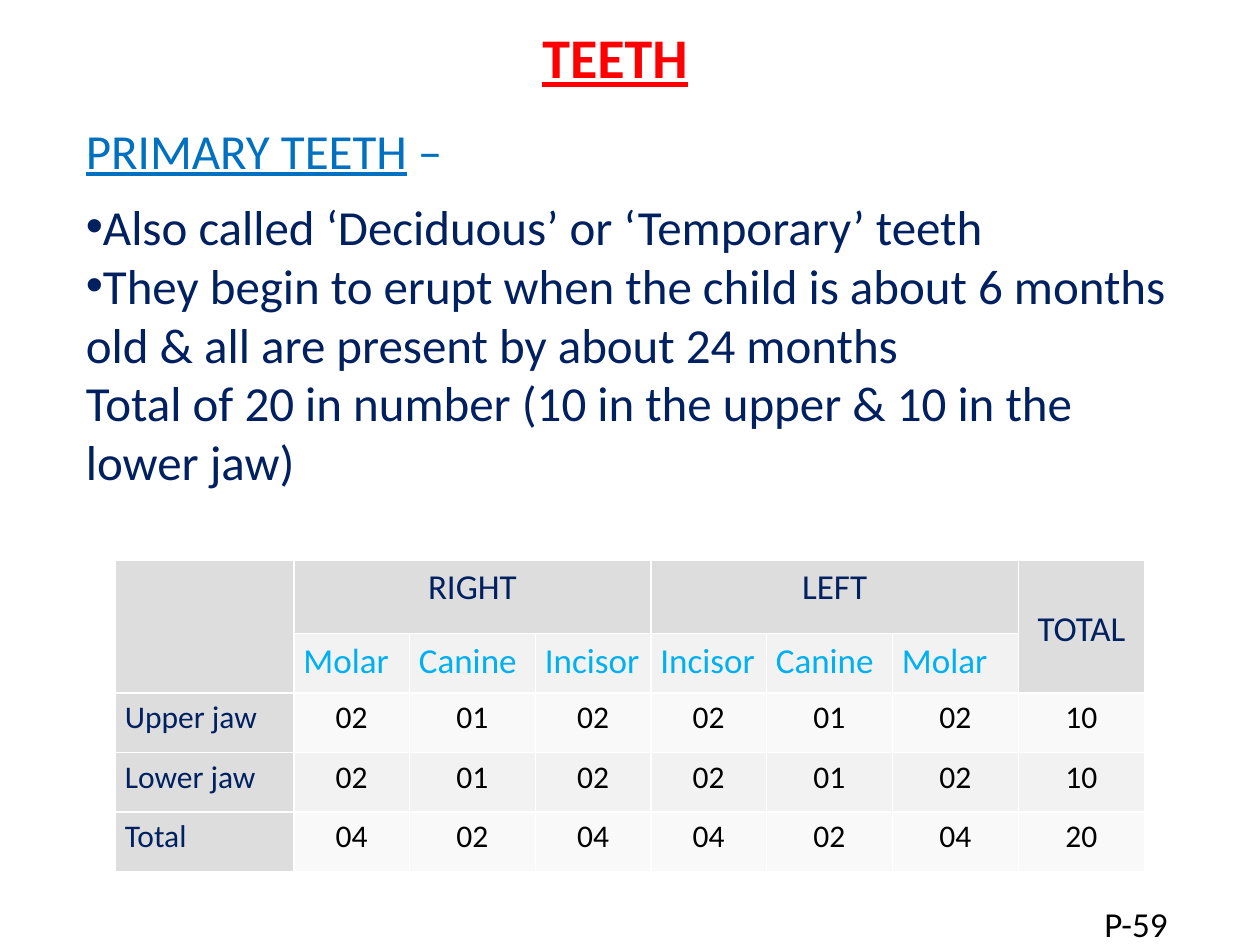
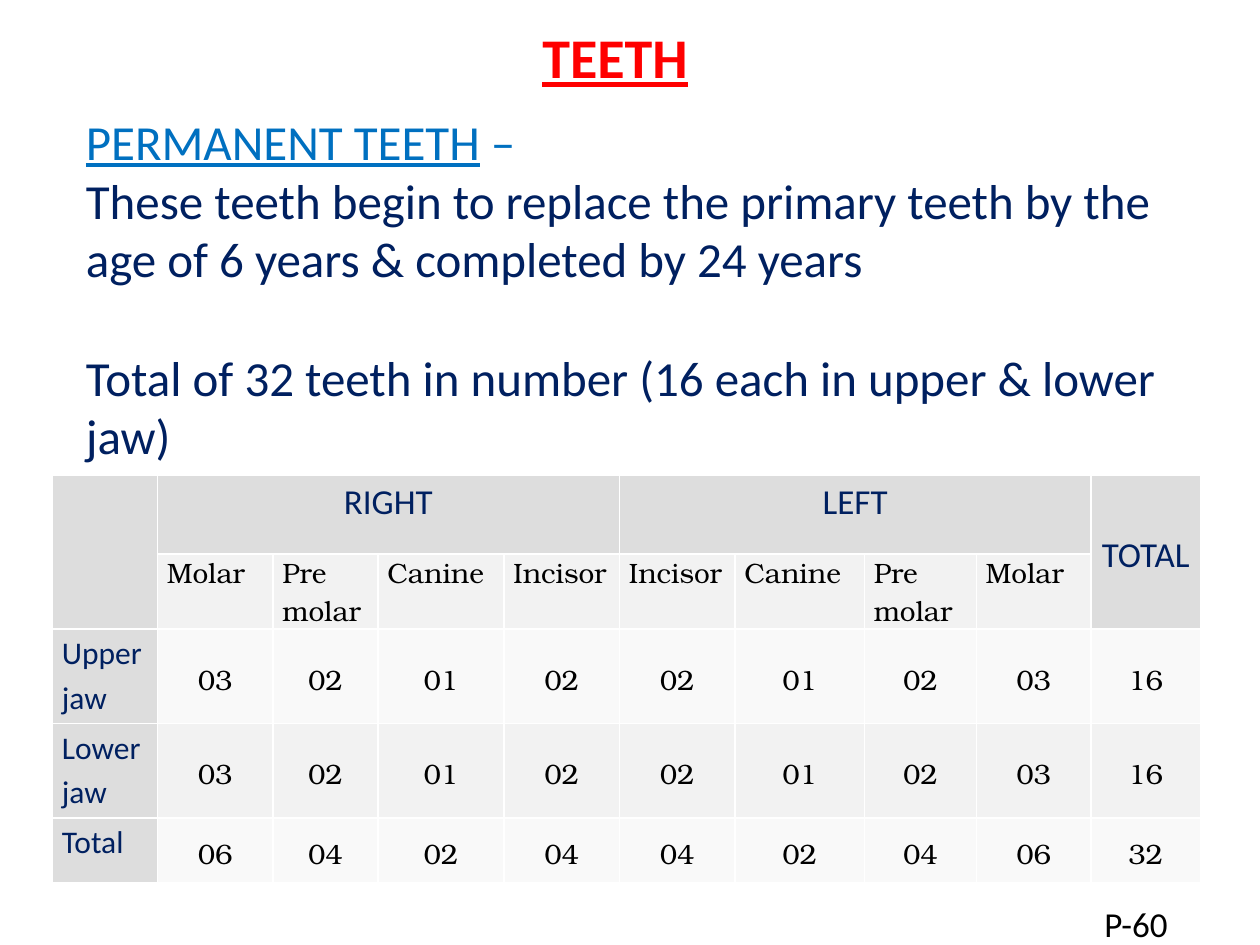
from dataclasses import dataclass

from lxml import etree
from pptx import Presentation
from pptx.dml.color import RGBColor
from pptx.enum.text import MSO_ANCHOR, MSO_AUTO_SIZE, PP_ALIGN
from pptx.oxml.ns import qn
from pptx.util import Pt

RED = RGBColor(0xFF, 0x00, 0x00)
BLUE = RGBColor(0x00, 0x70, 0xC0)
NAVY = RGBColor(0x00, 0x20, 0x60)
SKY = RGBColor(0x00, 0xB0, 0xF0)
BLACK = RGBColor(0x00, 0x00, 0x00)
GREY = RGBColor(0xDD, 0xDD, 0xDD)
PALE = RGBColor(0xF2, 0xF2, 0xF2)
LIGHT = RGBColor(0xF9, 0xF9, 0xF9)
CENTER, JUSTIFY = PP_ALIGN.CENTER, PP_ALIGN.JUSTIFY
TOP, MIDDLE = MSO_ANCHOR.TOP, MSO_ANCHOR.MIDDLE
FIT = MSO_AUTO_SIZE.SHAPE_TO_FIT_TEXT
SANS, SERIF = "Calibri", "TeX Gyre Bonum"


@dataclass(frozen=True)
class Style:
    """Look of a piece of text."""
    size: float
    color: RGBColor
    face: str = SANS
    bold: bool = False
    under: bool = False


@dataclass(frozen=True)
class Point:
    """One body paragraph."""
    text: str
    bullet: bool = False
    before: float = 0


@dataclass(frozen=True)
class Grid:
    """Tooth counts of one jaw side, with the look of their table."""
    left: float
    top: float
    cols: tuple
    rows: tuple
    teeth: dict
    name: Style
    count: Style
    anchor: MSO_ANCHOR
    loose: bool


@dataclass(frozen=True)
class Page:
    """Content of one slide."""
    head: str
    points: tuple
    height: float
    spaced: bool
    grid: Grid
    number: str


TITLE = Style(32, RED, bold=True, under=True)
HEAD = Style(28, BLUE, under=True)
DASH = Style(28, BLUE)
BODY = Style(28, NAVY)
SIDE = Style(20, NAVY)
JAW = Style(18, NAVY)
FOOT = Style(20, BLACK)
SMALL = Style(16, BLACK, SERIF)

PAGES = (
    Page(
        "PRIMARY TEETH",
        (
            Point("Also called ‘Deciduous’ or ‘Temporary’ teeth", True),
            Point("They begin to erupt when the child is about 6 months old "
                  "& all are present by about 24 months", True),
            Point("Total of 20 in number (10 in the upper & 10 in the lower jaw)"),
        ),
        226, True,
        Grid(66, 320, (102, 66, 72, 66, 66, 72, 72, 72), (42, 34, 34, 34, 34),
             {"Molar": 2, "Canine": 1, "Incisor": 2},
             Style(20, SKY), Style(18, BLACK), TOP, True),
        "P-59",
    ),
    Page(
        "PERMANENT TEETH",
        (
            Point("These teeth begin to replace the primary teeth by the age "
                  "of 6 years & completed by 24 years"),
            Point("Total of 32 teeth in number (16 each in upper & lower jaw)",
                  before=34),
        ),
        211, False,
        Grid(30, 271.5, (60, 66, 60, 72, 66, 66, 74, 64, 65.5, 62.6),
             (45, 43, 54, 54, 37),
             {"Molar": 3, "Pre\nmolar": 2, "Canine": 1, "Incisor": 2},
             SMALL, SMALL, MIDDLE, False),
        "P-60",
    ),
)


def paint(run, style: Style) -> None:
    """Give a run its style."""
    font = run.font
    font.name, font.size, font.color.rgb = style.face, Pt(style.size), style.color
    font.bold, font.underline = style.bold, style.under


def relax(para) -> None:
    """Open up the line spacing and the gap after a paragraph."""
    para.line_spacing, para.space_after = 1.15, Pt(10)


def add_box(slide, left: float, top: float, width: float, height: float,
            text: str, style: Style):
    """Add a text box and return its text frame."""
    frame = slide.shapes.add_textbox(
        Pt(left), Pt(top), Pt(width), Pt(height)).text_frame
    frame.text = text
    paint(frame.paragraphs[0].runs[0], style)
    return frame


def add_dot(para) -> None:
    """Put a bullet right before the text."""
    props = para._p.get_or_add_pPr()
    props.set("marL", "0")
    props.set("indent", "0")
    etree.SubElement(props, qn("a:buFont"), typeface="Arial")
    etree.SubElement(props, qn("a:buChar"), char="•")


def add_body(slide, page: Page) -> None:
    """Add the heading and the points below it."""
    frame = add_box(slide, 42, 60, 644, page.height, page.head, HEAD)
    frame.word_wrap, frame.auto_size = True, FIT
    head = frame.paragraphs[0]
    dash = head.add_run()
    dash.text = " –"
    paint(dash, DASH)
    if page.spaced:
        relax(head)
    for point in page.points:
        para = frame.add_paragraph()
        para.text = point.text
        if point.bullet:
            add_dot(para)
        if point.before:
            para.space_before = Pt(point.before)
        paint(para.runs[0], BODY)


def edge(cell) -> None:
    """Draw thin white borders around a cell."""
    props = cell._tc.get_or_add_tcPr()
    for side in ("lnL", "lnR", "lnT", "lnB"):
        line = etree.SubElement(props, qn(f"a:{side}"), w=str(Pt(1)))
        fill = etree.SubElement(line, qn("a:solidFill"))
        etree.SubElement(fill, qn("a:srgbClr"), val="FFFFFF")


def put(cell, text: str, style: Style, align: PP_ALIGN,
        anchor: MSO_ANCHOR = TOP, loose: bool = True) -> None:
    """Write styled text into a cell."""
    cell.text_frame.text = text
    cell.vertical_anchor = anchor
    for para in cell.text_frame.paragraphs:
        para.alignment = align
        if loose:
            relax(para)
        for run in para.runs:
            paint(run, style)


def add_grid(slide, grid: Grid) -> None:
    """Add the table of teeth, with the left side mirroring the right."""
    table = slide.shapes.add_table(
        len(grid.rows), len(grid.cols), Pt(grid.left), Pt(grid.top),
        Pt(sum(grid.cols)), Pt(sum(grid.rows))).table
    table.first_row = table.horz_banding = False
    for col, width in zip(table.columns, grid.cols):
        col.width = Pt(width)
    for row, height in zip(table.rows, grid.rows):
        row.height = Pt(height)

    last, half = len(grid.cols) - 1, len(grid.teeth)
    for r in range(len(grid.rows)):
        for c in range(last + 1):
            cell = table.cell(r, c)
            cell.margin_left = cell.margin_right = Pt(5.4)
            cell.margin_top = cell.margin_bottom = 0
            edge(cell)
            dark = r == 0 or c == 0 or (r == 1 and c == last)
            cell.fill.solid()
            cell.fill.fore_color.rgb = GREY if dark else PALE if r % 2 else LIGHT

    for c in (0, last):
        table.cell(0, c).merge(table.cell(1, c))
    for c, text in ((1, "RIGHT"), (1 + half, "LEFT")):
        table.cell(0, c).merge(table.cell(0, c + half - 1))
        put(table.cell(0, c), text, SIDE, CENTER)
    put(table.cell(0, last), "TOTAL", SIDE, CENTER, MIDDLE)

    names, counts = list(grid.teeth), list(grid.teeth.values())
    for c, name in enumerate(names + names[::-1], 1):
        put(table.cell(1, c), name, grid.name, JUSTIFY, loose=grid.loose)
    both = counts + counts[::-1]
    jaws = (("Upper jaw", 1), ("Lower jaw", 1), ("Total", 2))
    for r, (label, times) in enumerate(jaws, 2):
        put(table.cell(r, 0), label, JAW, JUSTIFY)
        for c, count in enumerate(both + [sum(both)], 1):
            put(table.cell(r, c), f"{count * times:02}", grid.count, CENTER,
                grid.anchor)


def add_page(deck, page: Page) -> None:
    """Add one slide."""
    slide = deck.slides.add_slide(deck.slide_layouts[6])
    title = add_box(slide, 16.5, 9.5, 670, 425.5, "TEETH", TITLE)
    title.word_wrap = True
    title.paragraphs[0].alignment = CENTER
    add_body(slide, page)
    add_grid(slide, page.grid)
    add_box(slide, 624, 512, 52, 31.5, page.number, FOOT).auto_size = FIT


def main() -> None:
    """Build and save the deck."""
    deck = Presentation()
    deck.slide_width, deck.slide_height = Pt(720), Pt(540)
    for page in PAGES:
        add_page(deck, page)
    deck.save("out.pptx")


if __name__ == "__main__":
    main()
